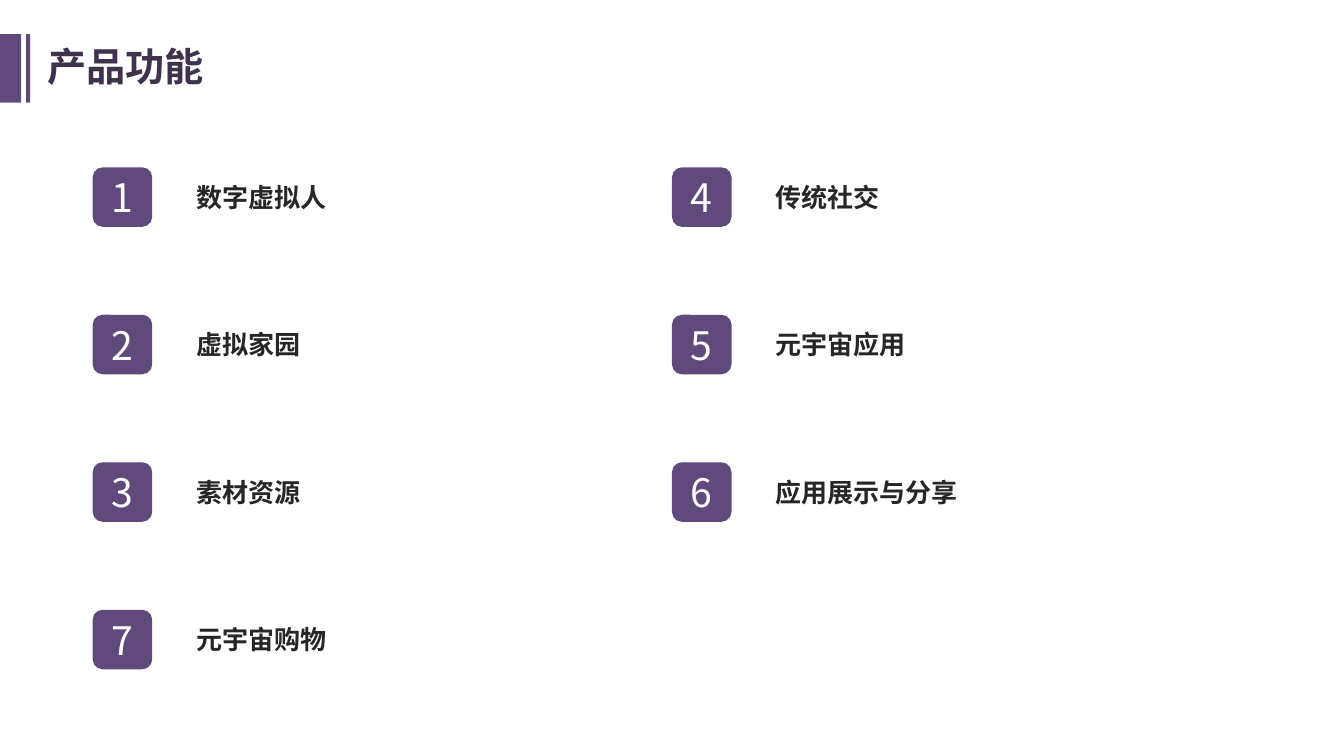
from dataclasses import dataclass

from lxml.etree import SubElement
from pptx import Presentation
from pptx.dml.color import RGBColor
from pptx.enum.shapes import MSO_SHAPE
from pptx.enum.text import MSO_ANCHOR, PP_ALIGN
from pptx.oxml.ns import qn
from pptx.shapes.autoshape import Shape
from pptx.slide import Slide
from pptx.util import Inches, Pt

SLIDE_WIDTH = Inches(13.33)
SLIDE_HEIGHT = Inches(7.5)


@dataclass(frozen=True)
class Theme:
    font: str = "Noto Sans CJK SC"
    purple: RGBColor = RGBColor(0x60, 0x4A, 0x7B)
    title: RGBColor = RGBColor(0x40, 0x32, 0x4D)
    label: RGBColor = RGBColor(0x26, 0x26, 0x26)
    number: RGBColor = RGBColor(0xFF, 0xFF, 0xFF)
    large: float = 28
    medium: float = 18.6


@dataclass(frozen=True)
class Area:
    """Left, top, width and height as percentages of the slide."""
    left: float
    top: float
    width: float
    height: float

    def shifted(self, column: int, row: int) -> "Area":
        return Area(self.left + column * COLUMN_PITCH, self.top + row * ROW_PITCH,
                    self.width, self.height)

    def lengths(self) -> tuple[int, int, int, int]:
        return (int(SLIDE_WIDTH * self.left / 100), int(SLIDE_HEIGHT * self.top / 100),
                int(SLIDE_WIDTH * self.width / 100), int(SLIDE_HEIGHT * self.height / 100))


@dataclass(frozen=True)
class Feature:
    number: int
    name: str
    column: int
    row: int


THEME = Theme()
COLUMN_PITCH = 43.1
ROW_PITCH = 19.51
BADGE = Area(6.9, 22.13, 4.43, 7.87)
LABEL = Area(13.88, 23.33, 15.53, 5.47)
TITLE = Area(2.78, 4.93, 21.53, 7.6)
TITLE_BARS = (Area(0, 4.53, 1.58, 9.07), Area(1.95, 4.53, 0.3, 9.07))

FEATURES = (
    Feature(1, "数字虚拟人", 0, 0),
    Feature(2, "虚拟家园", 0, 1),
    Feature(3, "素材资源", 0, 2),
    Feature(4, "传统社交", 1, 0),
    Feature(5, "元宇宙应用", 1, 1),
    Feature(6, "应用展示与分享", 1, 2),
    Feature(7, "元宇宙购物", 0, 3),
)


def write(holder: Shape, words: str, size: float, color: RGBColor, bold: bool) -> None:
    frame = holder.text_frame
    frame.text = words
    frame.word_wrap = True
    frame.vertical_anchor = MSO_ANCHOR.MIDDLE
    frame.margin_top = frame.margin_bottom = 0
    run = frame.paragraphs[0].runs[0]
    run.font.name = THEME.font
    run.font.size = Pt(size)
    run.font.bold = bold
    run.font.color.rgb = color
    SubElement(run.font._element, qn("a:ea"), typeface=THEME.font)


def add_block(slide: Slide, area: Area, outline: MSO_SHAPE) -> Shape:
    block = slide.shapes.add_shape(outline, *area.lengths())
    block.shadow.inherit = False
    block.fill.solid()
    block.fill.fore_color.rgb = THEME.purple
    block.line.fill.background()
    return block


def add_words(slide: Slide, area: Area, words: str, size: float, color: RGBColor) -> None:
    write(slide.shapes.add_textbox(*area.lengths()), words, size, color, True)


def add_feature(slide: Slide, feature: Feature) -> None:
    badge = add_block(slide, BADGE.shifted(feature.column, feature.row),
                      MSO_SHAPE.ROUNDED_RECTANGLE)
    write(badge, str(feature.number), THEME.large, THEME.number, False)
    badge.text_frame.paragraphs[0].alignment = PP_ALIGN.CENTER
    add_words(slide, LABEL.shifted(feature.column, feature.row),
              feature.name, THEME.medium, THEME.label)


def main() -> None:
    deck = Presentation()
    deck.slide_width = SLIDE_WIDTH
    deck.slide_height = SLIDE_HEIGHT
    slide = deck.slides.add_slide(deck.slide_layouts[6])
    for bar in TITLE_BARS:
        add_block(slide, bar, MSO_SHAPE.RECTANGLE)
    add_words(slide, TITLE, "产品功能", THEME.large, THEME.title)
    for feature in FEATURES:
        add_feature(slide, feature)
    deck.save("out.pptx")


if __name__ == "__main__":
    main()
